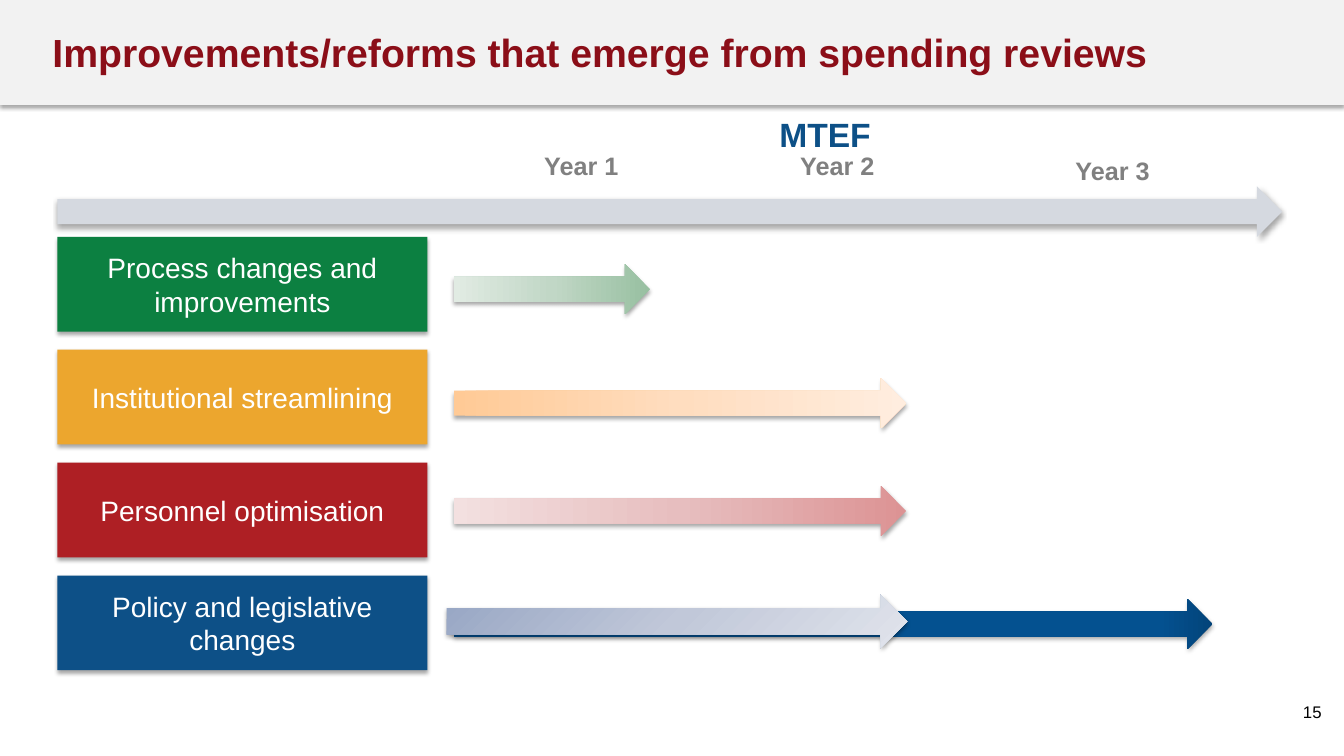
from lxml import etree
from pptx import Presentation
from pptx.dml.color import RGBColor
from pptx.enum.shapes import MSO_SHAPE
from pptx.enum.text import MSO_ANCHOR, MSO_AUTO_SIZE, PP_ALIGN
from pptx.oxml.ns import qn
from pptx.util import Inches, Pt

RECTANGLE, ARROW = MSO_SHAPE.RECTANGLE, MSO_SHAPE.RIGHT_ARROW
LEFT, CENTER, RIGHT = PP_ALIGN.LEFT, PP_ALIGN.CENTER, PP_ALIGN.RIGHT
TOP, MIDDLE = MSO_ANCHOR.TOP, MSO_ANCHOR.MIDDLE
NO_AUTOFIT = MSO_AUTO_SIZE.NONE
TITLE_ONLY = 5
COLUMNS, ROWS = 133.33, 75

NAVY, MAROON, GREY, WHITE, BLACK = "0D5087", "8B0E18", "808080", "FFFFFF", "000000"


def color(hex_text):
    return RGBColor.from_string(hex_text)


class ReformSlide:
    """Draws on a grid of tenth-inch columns and rows; a box is left, top, width, height."""

    font = "Arial"

    def __init__(self, presentation):
        self.column = presentation.slide_width / COLUMNS
        self.row = presentation.slide_height / ROWS
        self.slide = presentation.slides.add_slide(presentation.slide_layouts[TITLE_ONLY])

    def place(self, box):
        left, top, width, height = box
        return [round(length) for length in (left * self.column, top * self.row,
                                             width * self.column, height * self.row)]

    def add_text(self, shape, text, size, hex_text, bold=False, align=LEFT, anchor=TOP):
        frame = shape.text_frame
        frame.word_wrap = True
        frame.auto_size = NO_AUTOFIT
        frame.vertical_anchor = anchor
        paragraph = frame.paragraphs[0]
        paragraph.alignment = align
        run = paragraph.add_run()
        run.text = text
        run.font.name, run.font.size, run.font.bold = self.font, Pt(size), bold
        run.font.color.rgb = color(hex_text)

    def title(self, text, box):
        title = self.slide.shapes.title
        title.left, title.top, title.width, title.height = self.place(box)
        self.add_text(title, text, 28, MAROON, bold=True, anchor=MIDDLE)

    def label(self, text, box, size, hex_text, bold=True, align=LEFT):
        text_box = self.slide.shapes.add_textbox(*self.place(box))
        self.add_text(text_box, text, size, hex_text, bold, align)

    def block(self, kind, box, hex_text=None):
        """Add a borderless shape with the soft shadow below it."""
        shape = self.slide.shapes.add_shape(kind, *self.place(box))
        if hex_text:
            shape.fill.solid()
            shape.fill.fore_color.rgb = color(hex_text)
        shape.line.fill.background()
        shape.shadow.inherit = False
        effects = shape.element.spPr.find(qn("a:effectLst"))
        shadow = etree.SubElement(effects, qn("a:outerShdw"), blurRad=str(Pt(3.1)),
                                  dist=str(Pt(1.8)), dir="5400000", rotWithShape="0")
        black = etree.SubElement(shadow, qn("a:srgbClr"), val=BLACK)
        etree.SubElement(black, qn("a:alpha"), val="35000")
        return shape

    def header_band(self, box):
        band = self.block(RECTANGLE, box, "F2F2F2")
        self.slide.shapes.title.element.addprevious(band.element)

    def category(self, text, box, hex_text):
        shape = self.block(RECTANGLE, box, hex_text)
        self.add_text(shape, text, 20, WHITE, align=CENTER, anchor=MIDDLE)

    def gradient_arrow(self, box, stops, angle):
        """Stops are (percent, colour) pairs; the angle runs clockwise."""
        arrow = self.block(ARROW, box)
        arrow.fill.gradient()
        arrow.fill.gradient_angle = (360 - angle) % 360
        stop_list = arrow.element.spPr.find(qn("a:gradFill")).find(qn("a:gsLst"))
        for old_stop in list(stop_list):
            stop_list.remove(old_stop)
        for percent, hex_text in stops:
            stop = etree.SubElement(stop_list, qn("a:gs"), pos=str(percent * 1000))
            etree.SubElement(stop, qn("a:srgbClr"), val=hex_text)


def even_stops(*hex_texts):
    return list(zip((0, 50, 100), hex_texts))


CATEGORIES = [
    ("Process changes and improvements", "0C8041"),
    ("Institutional streamlining", "ECA62E"),
    ("Personnel optimisation", "AE1F24"),
    ("Policy and legislative changes", NAVY),
]
YEARS = [("Year 1", 53, 14.4), ("Year 2", 78.4, 14.4), ("Year 3", 105.7, 14.9)]
REFORM_ARROWS = [
    ((45, 26.2, 19.5, 5), even_stops("98C0A1", "C1D7C6", "E1EBE3"), 180),
    ((45, 37.5, 44.9, 5), even_stops("FFCA96", "FFDDBF", "FFEDDF"), 0),
    ((45, 48.2, 44.9, 5), even_stops("DC9394", "E7BEBF", "F3E0E0"), 180),
    ((45, 59.4, 75.3, 5), [(0, "023055"), (0, "03447A"), (7, "045190")], 180),
    ((44.3, 59, 45.7, 5.3), even_stops("97A6C4", "C1C8D9", "E1E4EC"), 45),
]


def main():
    presentation = Presentation()
    presentation.slide_width, presentation.slide_height = Inches(13.33), Inches(7.5)
    page = ReformSlide(presentation)

    page.header_band((0, 0, COLUMNS, 10.4))
    page.title("Improvements/reforms that emerge from spending reviews", (4.2, 1.3, 120.3, 7.7))
    page.label("15", (124.5, 69.1, 7.6, 3.9), 12, BLACK, bold=False, align=RIGHT)

    for index, (text, hex_text) in enumerate(CATEGORIES):
        page.category(text, (5.7, 23.5 + 11.2 * index, 36.7, 9.4), hex_text)

    page.block(ARROW, (5.7, 18.5, 121.5, 5), "D5D9E0")
    for text, left, top in YEARS:
        page.label(text, (left, top, 11.6, 4), 18, GREY)
    page.label("MTEF", (63.4, 10.8, 36.9, 5), 24, NAVY, align=CENTER)

    for box, stops, angle in REFORM_ARROWS:
        page.gradient_arrow(box, stops, angle)

    presentation.save("out.pptx")


if __name__ == "__main__":
    main()
